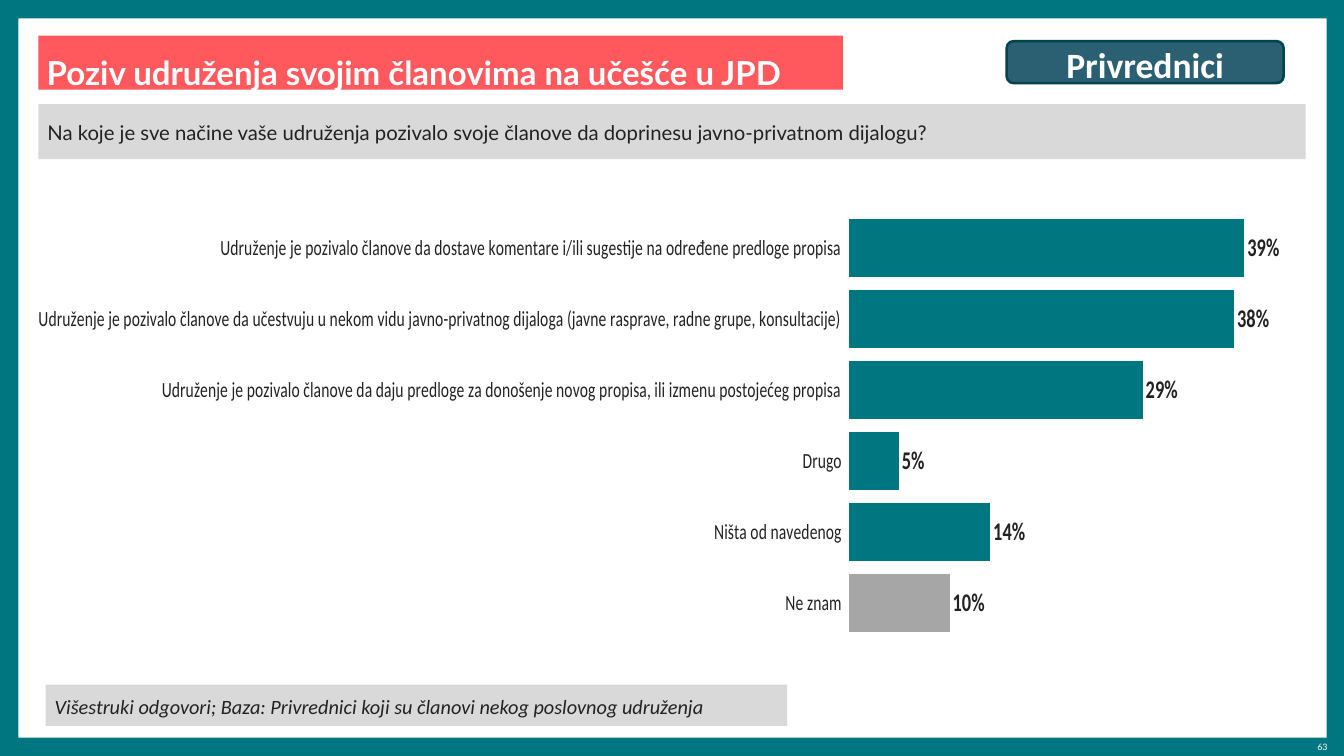
"""Build the slide on how associations invite members to the public-private dialogue."""
from dataclasses import dataclass, field
from typing import Optional

from lxml.etree import SubElement
from pptx import Presentation
from pptx.chart.data import CategoryChartData
from pptx.dml.color import RGBColor
from pptx.enum.chart import XL_CHART_TYPE, XL_LABEL_POSITION, XL_TICK_MARK
from pptx.enum.shapes import MSO_SHAPE
from pptx.enum.text import MSO_ANCHOR, PP_ALIGN
from pptx.oxml.ns import qn
from pptx.util import Inches, Pt

TEAL = RGBColor(0x00, 0x76, 0x81)
WHITE = RGBColor(0xFF, 0xFF, 0xFF)
CORAL = RGBColor(0xFF, 0x58, 0x5D)
LIGHT = RGBColor(0xD9, 0xD9, 0xD9)
GREY = RGBColor(0xA6, 0xA6, 0xA6)
INK = RGBColor(0x22, 0x22, 0x23)
SLATE = RGBColor(0x2B, 0x5F, 0x72)
DARK_TEAL = RGBColor(0x00, 0x45, 0x4C)

WIDTH, HEIGHT = Inches(14.7), Inches(8.27)
SIDES = ("margin_left", "margin_top", "margin_right", "margin_bottom")


@dataclass(frozen=True)
class Area:
    """A rectangle in percent of the slide's width and height."""
    left: float
    top: float
    width: float
    height: float

    def emu(self) -> tuple[int, int, int, int]:
        """Return left, top, width and height in EMU."""
        return (round(WIDTH * self.left / 100), round(HEIGHT * self.top / 100),
                round(WIDTH * self.width / 100), round(HEIGHT * self.height / 100))


@dataclass(frozen=True)
class Panel:
    """A filled shape or a plain text box with one paragraph."""
    area: Area
    text: str = ""
    fill: Optional[RGBColor] = None
    line: Optional[RGBColor] = None
    shape: MSO_SHAPE = MSO_SHAPE.RECTANGLE
    insets: tuple = (0.1, 0, 0.1, 0)
    font: dict = field(default_factory=dict)
    para: dict = field(default_factory=dict)


@dataclass(frozen=True)
class Answer:
    """One bar of the chart."""
    label: str
    share: int
    color: RGBColor = TEAL


BODY = {"line_spacing": 1.1, "space_before": Pt(6), "space_after": Pt(6)}

PANELS = [
    Panel(Area(1.36, 2.42, 97.35, 95.16), fill=WHITE),
    Panel(Area(93.4, 97.94, 5.37, 1.57), "63", insets=(0, 0, 0, 0),
          font={"name": "Lato", "size": Pt(7), "color": WHITE},
          para={"alignment": PP_ALIGN.RIGHT, "line_spacing": 1.1, "space_before": Pt(27.6)}),
    Panel(Area(2.86, 4.72, 59.86, 7.13), "Poziv udruženja svojim članovima na učešće u JPD",
          fill=CORAL, insets=(0.09, 0.08, 0.09, 0),
          font={"name": "Lato", "size": Pt(26), "color": WHITE, "bold": True},
          para={"line_spacing": Pt(41)}),
    Panel(Area(2.86, 13.78, 94.29, 7.26),
          "Na koje je sve načine vaše udruženja pozivalo svoje članove da doprinesu "
          "javno-privatnom dijalogu?",
          fill=LIGHT, font={"name": "Lato", "size": Pt(16), "color": INK}, para=BODY),
    Panel(Area(74.9, 5.44, 20.61, 5.56), "Privrednici", fill=SLATE, line=DARK_TEAL,
          shape=MSO_SHAPE.ROUNDED_RECTANGLE, insets=(0.04, 0.04, 0.04, 0.04),
          font={"name": "Calibri", "size": Pt(28), "color": WHITE, "bold": True},
          para={"alignment": PP_ALIGN.CENTER, "line_spacing": 1.1, "space_before": Pt(24)}),
    Panel(Area(3.4, 90.57, 55.17, 5.44),
          "Višestruki odgovori; Baza: Privrednici koji su članovi nekog poslovnog udruženja",
          fill=LIGHT, font={"name": "Calibri", "size": Pt(16), "color": INK, "italic": True},
          para=BODY),
]

CHART_AREA = Area(2.86, 28.05, 94.29, 56.95)
PLOT_LAYOUT = {"layoutTarget": "inner", "xMode": "edge", "yMode": "edge",
               "x": 0.5, "y": 0, "w": 0.5, "h": 0.99}
ANSWERS = [
    Answer("Udruženje je pozivalo članove da dostave komentare i/ili sugestije "
           "na određene predloge propisa", 39),
    Answer("Udruženje je pozivalo članove da učestvuju u nekom vidu javno-privatnog dijaloga "
           "(javne rasprave, radne grupe, konsultacije)", 38),
    Answer("Udruženje je pozivalo članove da daju predloge za donošenje novog propisa, "
           "ili izmenu postojećeg propisa", 29),
    Answer("Drugo", 5),
    Answer("Ništa od navedenog", 14),
    Answer("Ne znam", 10, GREY),
]


def set_all(target, values: dict) -> None:
    """Set each named attribute of the target."""
    for name, value in values.items():
        if name == "color":
            target.color.rgb = value
        else:
            setattr(target, name, value)


def paint(fmt, fill: RGBColor, line: Optional[RGBColor], width: float) -> None:
    """Give a shape or chart format a solid fill and an optional line."""
    fmt.fill.solid()
    fmt.fill.fore_color.rgb = fill
    if line is None:
        fmt.line.fill.background()
    else:
        fmt.line.color.rgb = line
        fmt.line.width = Pt(width)


def draw_panel(slide, panel: Panel) -> None:
    """Draw one panel and its text."""
    if panel.fill is None:
        sp = slide.shapes.add_textbox(*panel.area.emu())
    else:
        sp = slide.shapes.add_shape(panel.shape, *panel.area.emu())
        sp.shadow.inherit = False
        paint(sp, panel.fill, panel.line, 2)
    if not panel.text:
        return
    tf = sp.text_frame
    set_all(tf, {side: Inches(inset) for side, inset in zip(SIDES, panel.insets)})
    tf.word_wrap = True
    tf.vertical_anchor = MSO_ANCHOR.TOP if panel.fill is None else MSO_ANCHOR.MIDDLE
    p = tf.paragraphs[0]
    set_all(p, {"alignment": PP_ALIGN.LEFT} | panel.para)
    r = p.add_run()
    r.text = panel.text
    set_all(r.font, panel.font)


def place_plot(chart) -> None:
    """Fix the inner plot area within the chart."""
    plot_area = chart.plots[0]._element.getparent()
    layout = plot_area.find(qn("c:layout"))
    if layout is None:
        layout = SubElement(plot_area, qn("c:layout"))
        plot_area.insert(0, layout)
    manual = SubElement(layout, qn("c:manualLayout"))
    for name, value in PLOT_LAYOUT.items():
        SubElement(manual, qn(f"c:{name}")).set("val", str(value))


def draw_chart(slide, answers: list[Answer]) -> None:
    """Draw the bar chart of answers."""
    data = CategoryChartData()
    data.categories = [answer.label for answer in answers]
    data.add_series("Series 1", [answer.share for answer in answers])
    chart = slide.shapes.add_chart(XL_CHART_TYPE.BAR_CLUSTERED, *CHART_AREA.emu(), data).chart
    set_all(chart, {"has_legend": False, "has_title": False})
    set_all(chart.font, {"name": "Lato", "size": Pt(18), "color": INK})

    axis = chart.category_axis
    set_all(axis, {"reverse_order": True, "major_tick_mark": XL_TICK_MARK.OUTSIDE,
                   "has_major_gridlines": False})
    axis.format.line.fill.background()
    set_all(axis.tick_labels.font, {"name": "Calibri", "size": Pt(17), "color": INK})
    set_all(chart.value_axis, {"visible": False, "has_major_gridlines": False,
                               "minimum_scale": 0, "maximum_scale": 45})

    plot = chart.plots[0]
    set_all(plot, {"gap_width": 20, "vary_by_categories": False, "has_data_labels": True})
    set_all(plot.data_labels, {"show_value": True, "position": XL_LABEL_POSITION.OUTSIDE_END,
                               "number_format": '#"%"', "number_format_is_linked": False})
    set_all(plot.data_labels.font,
            {"name": "Calibri", "size": Pt(20), "color": INK, "bold": True})
    series = plot.series[0]
    paint(series.format, TEAL, WHITE, 0.75)
    for i, answer in enumerate(answers):
        if answer.color != TEAL:
            paint(series.points[i].format, answer.color, WHITE, 0.75)
    place_plot(chart)


def main() -> None:
    """Build and save the slide."""
    prs = Presentation()
    set_all(prs, {"slide_width": WIDTH, "slide_height": HEIGHT})
    slide = prs.slides.add_slide(prs.slide_layouts[6])
    slide.background.fill.solid()
    slide.background.fill.fore_color.rgb = TEAL
    for panel in PANELS:
        draw_panel(slide, panel)
    draw_chart(slide, ANSWERS)
    prs.save("out.pptx")


if __name__ == "__main__":
    main()
